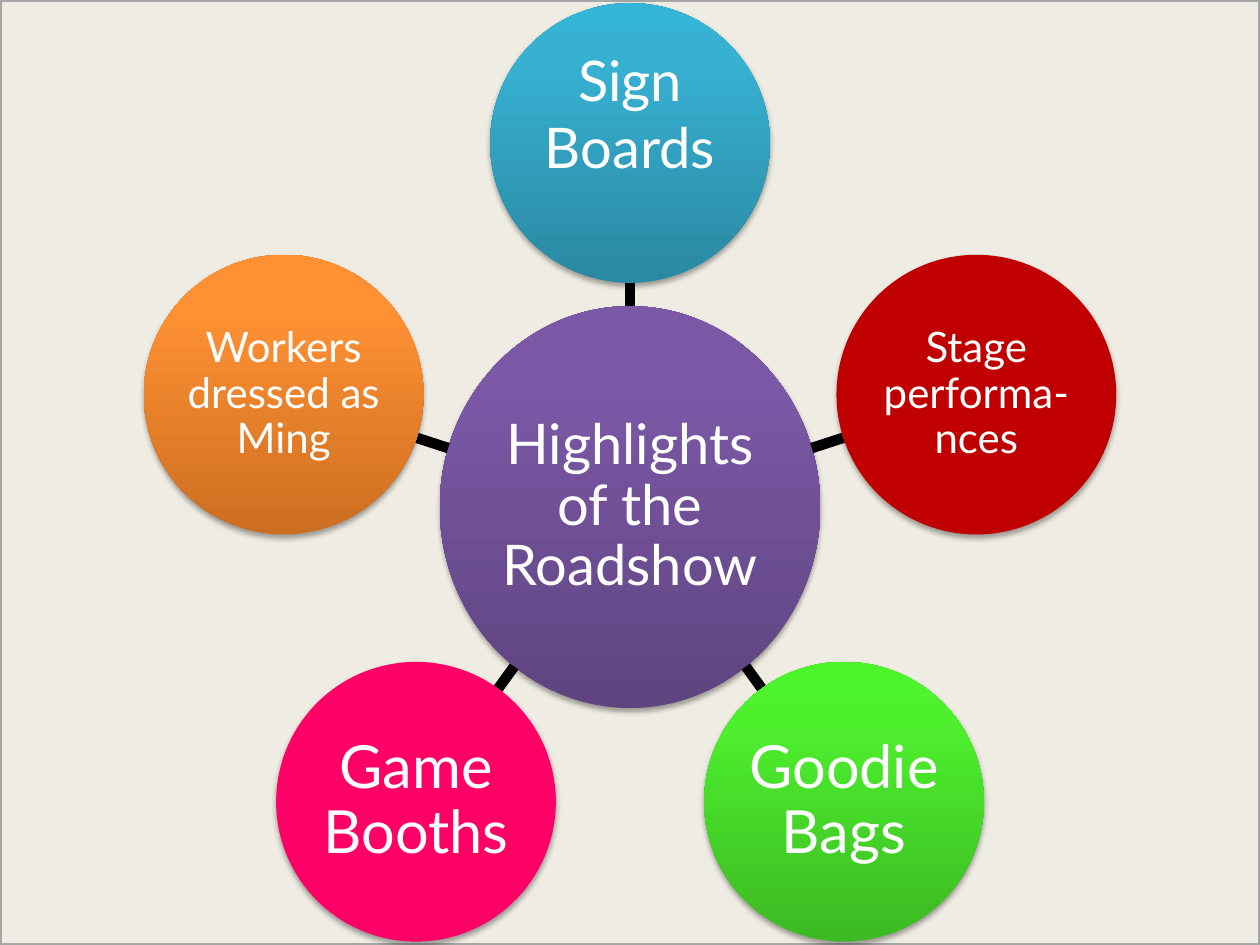
import math
from dataclasses import dataclass
from typing import Optional

import pptx
import pptx.util
import pptx.dml.color
import pptx.enum.shapes
import pptx.enum.text
import pptx.oxml
import pptx.oxml.ns
import pptx.presentation
import pptx.shapes.autoshape
import pptx.slide
import copy

RGB = pptx.dml.color.RGBColor
SHAPE = pptx.enum.shapes.MSO_SHAPE

# Grid of square cells; every length below is in columns and rows
COLUMNS, ROWS = 100, 75
CELL = pptx.util.Inches(0.1)
HUB_X, HUB_Y = COLUMNS / 2, 40.25
HUB_RADIUS_X, HUB_RADIUS_Y = 15.1, 15.95
ORBIT = 28.9
SATELLITE_RADIUS = 11.1
INSET = 0.2

WHITE = RGB(0xFF, 0xFF, 0xFF)
BLACK = RGB(0x00, 0x00, 0x00)
CREAM = RGB(0xEE, 0xEC, 0xE1)
GREY = RGB(0xA6, 0xA6, 0xA6)
PURPLE = (RGB(0x5F, 0x44, 0x80), RGB(0x7B, 0x58, 0xA6), RGB(0x7C, 0x57, 0xA8))
BLUE = (RGB(0x2A, 0x88, 0xA2), RGB(0x37, 0xB1, 0xD2), RGB(0x34, 0xB4, 0xD6))
GREEN = (RGB(0x3C, 0xB9, 0x23), RGB(0x4E, 0xF0, 0x2E), RGB(0x4C, 0xF5, 0x2A))
ORANGE = (RGB(0xCC, 0x6E, 0x20), RGB(0xFF, 0x90, 0x34), RGB(0xFF, 0x91, 0x36))
RED = (RGB(0xC0, 0x00, 0x00),)
PINK = (RGB(0xFF, 0x00, 0x66),)
STOP_POSITIONS = (0, 0.8, 1)


@dataclass(frozen=True)
class Bubble:
    text: str
    size: int
    colours: tuple[RGB, ...]
    line_spacing: float = 0.9
    bottom_inset: float = INSET


HUB = Bubble("Highlights of the Roadshow", 32, PURPLE)
# Clockwise from the top
SATELLITES = (
    Bubble("Sign Boards", 32, BLUE, line_spacing=1.0, bottom_inset=5),
    Bubble("Stage performa-nces", 24, RED),
    Bubble("Goodie Bags", 34, GREEN),
    Bubble("Game Booths", 34, PINK),
    Bubble("Workers dressed as Ming", 24, ORANGE),
)


def cells(count: float) -> int:
    return round(count * CELL)


def set_all(target: object, values: dict[str, object]) -> None:
    for name, value in values.items():
        setattr(target, name, value)


def add_effects(properties, shadow: Optional[str] = None) -> None:
    effects = pptx.oxml.parse_xml(
        f'<a:effectLst {pptx.oxml.ns.nsdecls("a")}>{shadow or ""}</a:effectLst>')
    properties.append(effects)


def soft_shadow() -> str:
    blur, distance = pptx.util.Pt(3.1), pptx.util.Pt(1.8)
    return (f'<a:outerShdw blurRad="{blur}" dist="{distance}" dir="5400000" '
            'rotWithShape="0"><a:srgbClr val="000000"><a:alpha val="35000"/>'
            '</a:srgbClr></a:outerShdw>')


def paint(shape: pptx.shapes.autoshape.Shape, colours: tuple[RGB, ...]) -> None:
    if len(colours) == 1:
        shape.fill.solid()
        shape.fill.fore_color.rgb = colours[0]
        return
    shape.fill.gradient()
    shape.fill.gradient_angle = 90
    stop_list = shape.element.xpath(".//a:gsLst")[0]
    stop_list.append(copy.deepcopy(stop_list[-1]))
    for stop, colour, position in zip(shape.fill.gradient_stops, colours, STOP_POSITIONS):
        stop.color.rgb = colour
        stop.position = position


def draw_backdrop(page: pptx.slide.Slide) -> None:
    panel = page.shapes.add_shape(SHAPE.RECTANGLE, 0, 0, cells(COLUMNS), cells(ROWS))
    paint(panel, (CREAM,))
    colour = panel.element.xpath("./p:spPr/a:solidFill/a:srgbClr")[0]
    colour.append(pptx.oxml.parse_xml(
        f'<a:alpha {pptx.oxml.ns.nsdecls("a")} val="90000"/>'))
    panel.line.color.rgb = GREY
    panel.line.width = pptx.util.Pt(2)
    panel.shadow.inherit = False


def draw_bubble(page: pptx.slide.Slide, bubble: Bubble, x: float, y: float,
                radius_x: float, radius_y: float) -> None:
    circle = page.shapes.add_shape(
        SHAPE.OVAL, cells(x - radius_x), cells(y - radius_y),
        cells(2 * radius_x), cells(2 * radius_y))
    paint(circle, bubble.colours)
    circle.line.fill.background()
    add_effects(circle.element.spPr, soft_shadow())

    frame = circle.text_frame
    set_all(frame, {
        "word_wrap": True,
        "vertical_anchor": pptx.enum.text.MSO_ANCHOR.MIDDLE,
        "margin_left": cells(INSET), "margin_right": cells(INSET),
        "margin_top": cells(INSET), "margin_bottom": cells(bubble.bottom_inset),
    })
    para = frame.paragraphs[0]
    set_all(para, {"alignment": pptx.enum.text.PP_ALIGN.CENTER,
                   "line_spacing": bubble.line_spacing})
    span = para.add_run()
    span.text = bubble.text
    set_all(span.font, {"name": "Lato", "size": pptx.util.Pt(bubble.size)})
    span.font.color.rgb = WHITE


def orbit_point(angle: float, distance: float) -> tuple[float, float]:
    return HUB_X + distance * math.sin(angle), HUB_Y - distance * math.cos(angle)


def draw_spoke(page: pptx.slide.Slide, angle: float) -> None:
    hub_edge = 1 / math.hypot(math.sin(angle) / HUB_RADIUS_X,
                              math.cos(angle) / HUB_RADIUS_Y)
    ends = orbit_point(angle, hub_edge) + orbit_point(angle, ORBIT - SATELLITE_RADIUS)
    spoke = page.shapes.add_connector(
        pptx.enum.shapes.MSO_CONNECTOR.STRAIGHT, *map(cells, ends))
    spoke.line.color.rgb = BLACK
    spoke.line.width = pptx.util.Pt(6)
    add_effects(spoke.element.spPr)


def main() -> None:
    deck = pptx.Presentation()
    set_all(deck, {"slide_width": cells(COLUMNS), "slide_height": cells(ROWS)})
    page = deck.slides.add_slide(deck.slide_layouts[6])

    draw_backdrop(page)
    draw_bubble(page, HUB, HUB_X, HUB_Y, HUB_RADIUS_X, HUB_RADIUS_Y)

    # Satellites share the orbit equally, each on its own spoke
    for index, bubble in enumerate(SATELLITES):
        angle = index * math.tau / len(SATELLITES)
        draw_spoke(page, angle)
        draw_bubble(page, bubble, *orbit_point(angle, ORBIT),
                    SATELLITE_RADIUS, SATELLITE_RADIUS)

    deck.save("out.pptx")


if __name__ == "__main__":
    main()
